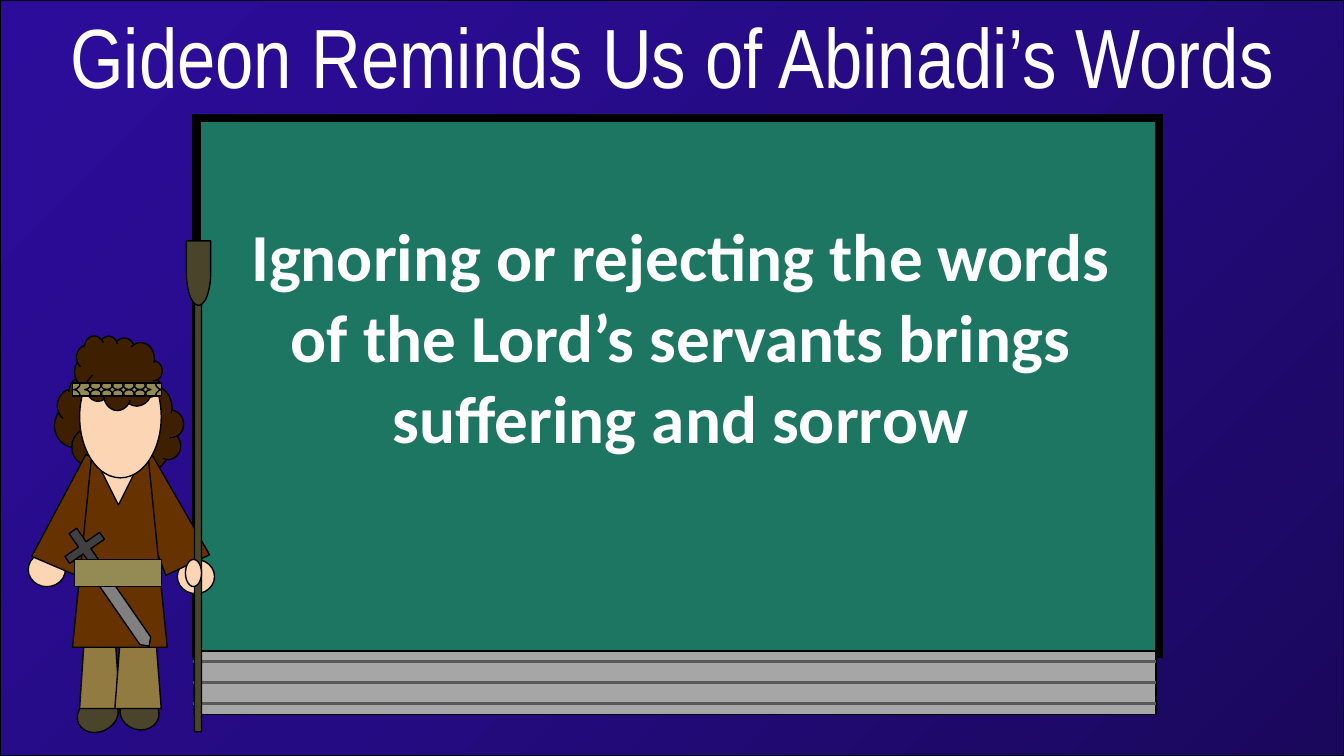
from lxml import etree
from pptx import Presentation
from pptx.dml.color import RGBColor
from pptx.enum.shapes import MSO_CONNECTOR, MSO_SHAPE as Shape
from pptx.enum.text import MSO_AUTO_SIZE, PP_ALIGN
from pptx.oxml.ns import qn
from pptx.util import Pt

WHITE, BLACK = "FFFFFF", "000000"
SKIN, HAIR, TUNIC, TROUSERS = "FCD5B5", "3E1F00", "663300", "927B40"
BELT, DARK_WOOD = "948A54", "4A452A"

BACKDROP_STOPS = [(0, "1A085C"), (50, "250B83"), (100, "2C0D9B")]

# text, box, size, font, bold
TITLE = ("Gideon Reminds Us of Abinadi’s Words",
         (0, 0, 960, 80), 60, "Arial Narrow", False)
MESSAGE = ("Ignoring or rejecting the words of the Lord’s servants brings suffering and sorrow",
           (156.2, 149.8, 660.2, 181.4), 48, "Calibri", True)

BOARD = (140.4, 84.2, 687.6, 383)
LEDGE = (138.2, 465.1, 687.6, 45.4)
GROOVE_TOP, GROOVE_STEP, GROOVE_COUNT = 472.3, 15.1, 3

# preset, box, rotation, fill, adjustment; from back to front
FIGURE = [
    (Shape.CLOUD, (38.9, 268.6, 92.2, 72.7), 0, HAIR, None),
    # feet and legs
    (Shape.OVAL, (54.7, 498.2, 30.2, 24.5), 155.1, DARK_WOOD, None),
    (Shape.OVAL, (85.7, 496.8, 28.1, 24.5), 15.7, DARK_WOOD, None),
    (Shape.FLOWCHART_MANUAL_OPERATION, (56.9, 419, 28.8, 87.1), 180, TROUSERS, None),
    (Shape.FLOWCHART_MANUAL_OPERATION, (82.1, 419, 33.1, 87.1), 180, TROUSERS, None),
    # hands, sleeves, tunic and neck
    (Shape.OVAL, (126.7, 399.6, 26.6, 24.5), 0, SKIN, None),
    (Shape.OVAL, (20.2, 394.6, 26.6, 24.5), 0, SKIN, None),
    (Shape.FLOWCHART_MANUAL_OPERATION, (99.4, 325.4, 34.6, 82.1), 154.9, TUNIC, None),
    (Shape.FLOWCHART_MANUAL_OPERATION, (37.4, 325.4, 34.6, 82.1), 203.2, TUNIC, None),
    (Shape.FLOWCHART_MANUAL_OPERATION, (51.8, 326.9, 67.7, 135.4), 180, TUNIC, None),
    (Shape.ISOSCELES_TRIANGLE, (67.7, 326.9, 33.8, 33.8), 180, SKIN, None),
    # sword hilt, blade and belt
    (Shape.CROSS, (45.4, 376.6, 30.2, 29.5), 325.1, "404040", 0.398),
    (Shape.PENTAGON, (59, 432, 60.5, 9.4), 235.3, "808080", None),
    (Shape.RECTANGLE, (53.3, 399.6, 61.9, 19.4), 0, BELT, None),
    # spear shaft, thumb, face and spearhead
    (Shape.PENTAGON, (-26.6, 352.1, 336.2, 5), 90, DARK_WOOD, 0.909),
    (Shape.OVAL, (132.5, 399.6, 11.5, 19.4), 0, SKIN, None),
    (Shape.OVAL, (56.9, 254.2, 58.3, 87.1), 0, SKIN, None),
    (Shape.FLOWCHART_DELAY, (118.8, 186.5, 46.1, 17.3), 270, DARK_WOOD, None),
    # curls and headband
    (Shape.CLOUD, (53.3, 239.8, 62.6, 53.3), 0, HAIR, None),
    (Shape.RECTANGLE, (51.8, 273.6, 63.4, 9.4), 0, BELT, None),
]
BEAD, BEAD_STEP, BEAD_COUNT = (52.6, 273.6, 15.8, 9.4), 7.9, 7


def colour(hex_value):
    return RGBColor.from_string(hex_value)


def add_preset(parent, preset, box, fill, line_width=1):
    shape = parent.add_shape(preset, *map(Pt, box))
    shape.shadow.inherit = False
    if fill:
        shape.fill.solid()
        shape.fill.fore_color.rgb = colour(fill)
    else:
        shape.fill.background()
    shape.line.color.rgb = colour(BLACK)
    shape.line.width = Pt(line_width)
    return shape


def add_figure_part(parent, preset, box, rotation, fill, adjustment):
    part = add_preset(parent, preset, box, fill)
    part.rotation = rotation
    part._element.spPr.find(qn("a:xfrm")).set("flipH", "1")
    if adjustment is not None:
        part.adjustments[0] = adjustment


def add_groove(parent, left, right, y):
    groove = parent.add_connector(MSO_CONNECTOR.STRAIGHT, Pt(left), Pt(y), Pt(right), Pt(y))
    groove.line.color.rgb = colour("595959")
    groove.line.width = Pt(2)
    etree.SubElement(groove._element.spPr, qn("a:effectLst"))


def add_text(parent, text, box, size, font, bold):
    frame = parent.add_textbox(*map(Pt, box)).text_frame
    frame.word_wrap = True
    frame.auto_size = MSO_AUTO_SIZE.SHAPE_TO_FIT_TEXT
    paragraph = frame.paragraphs[0]
    paragraph.alignment = PP_ALIGN.CENTER
    run = paragraph.add_run()
    run.text = text
    run.font.size = Pt(size)
    run.font.name = font
    run.font.bold = bold
    run.font.color.rgb = colour(WHITE)


def set_corner_gradient(shape, stops):
    """Fill with a circular gradient that starts in the bottom right corner."""
    shape.fill.gradient()
    gradient = shape._element.spPr.find(qn("a:gradFill"))
    for child in list(gradient):
        gradient.remove(child)
    stop_list = etree.SubElement(gradient, qn("a:gsLst"))
    for percent, hex_value in stops:
        stop = etree.SubElement(stop_list, qn("a:gs"), pos=str(percent * 1000))
        etree.SubElement(stop, qn("a:srgbClr"), val=hex_value)
    circle = etree.SubElement(gradient, qn("a:path"), path="circle")
    etree.SubElement(circle, qn("a:fillToRect"), l="100000", t="100000")


def main():
    deck = Presentation()
    deck.slide_width, deck.slide_height = Pt(960), Pt(540)
    shapes = deck.slides.add_slide(deck.slide_layouts[6]).shapes

    backdrop = add_preset(shapes, Shape.RECTANGLE, (0, 0, 960, 540), None)
    set_corner_gradient(backdrop, BACKDROP_STOPS)
    add_text(shapes, *TITLE)

    chalkboard = shapes.add_group_shape().shapes
    board = add_preset(chalkboard, Shape.RECTANGLE, BOARD, "1C7661", 6)
    outline = board._element.spPr.find(qn("a:ln"))
    etree.SubElement(outline, qn("a:miter"), lim="800000")
    add_preset(chalkboard, Shape.RECTANGLE, LEDGE, "A6A6A6")
    left, _, width, _ = LEDGE
    for row in range(GROOVE_COUNT):
        add_groove(chalkboard, left, left + width, GROOVE_TOP + row * GROOVE_STEP)
    add_text(shapes, *MESSAGE)

    figure = shapes.add_group_shape().shapes
    for part in FIGURE:
        add_figure_part(figure, *part)
    left, top, width, height = BEAD
    for column in range(BEAD_COUNT):
        box = (left + column * BEAD_STEP, top, width, height)
        add_figure_part(figure, Shape.PLAQUE, box, 0, None, 0.5)

    deck.save("out.pptx")


if __name__ == "__main__":
    main()
